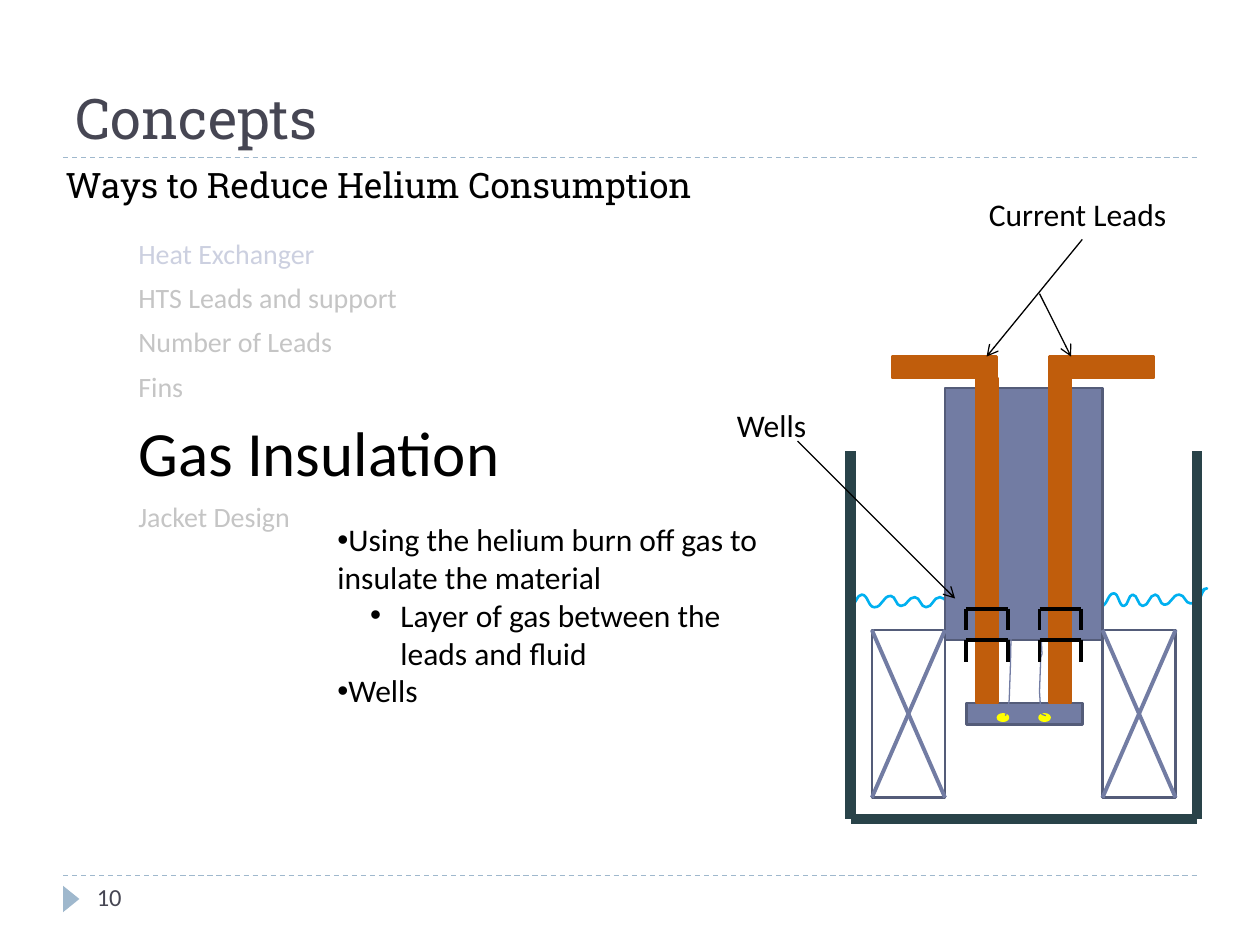
from dataclasses import dataclass
from itertools import pairwise, product
from typing import Optional

from lxml.etree import SubElement
from pptx import Presentation
from pptx.dml.color import RGBColor
from pptx.enum.dml import MSO_LINE
from pptx.enum.shapes import MSO_CONNECTOR, MSO_SHAPE
from pptx.enum.text import MSO_ANCHOR, PP_ALIGN
from pptx.oxml.ns import qn
from pptx.util import Inches, Pt

BLACK, INK, BLUE, BLUE_EDGE = "000000", "464653", "727CA3", "545C79"
COPPER, VESSEL, WATER, TRIM = "C05D0C", "294349", "00B0F0", "9FB8CD"
FADED, FADED_BLUE = "C5C5C5", "CCD0E0"


@dataclass
class TextLine:
    text: str
    size: float
    color: str = BLACK
    font: str = "Calibri"
    space_before: float = 0
    bullet: bool = False
    margin: float = 0
    indent: float = 0


@dataclass
class Box:
    left: float
    top: float
    width: float
    height: float
    fill: str
    edge: Optional[str] = None
    kind: MSO_SHAPE = MSO_SHAPE.RECTANGLE
    rotation: float = 0


def rgb(value: str) -> RGBColor:
    return RGBColor.from_string(value)


def write_lines(frame, lines: list[TextLine], wrap: bool = True) -> None:
    frame.word_wrap = wrap
    for index, line in enumerate(lines):
        paragraph = frame.paragraphs[0] if index == 0 else frame.add_paragraph()
        formats = {"alignment": PP_ALIGN.LEFT, "space_before": Pt(line.space_before)}
        for name, value in formats.items():
            setattr(paragraph, name, value)
        properties = paragraph._p.get_or_add_pPr()
        properties.set("marL", str(Inches(line.margin)))
        properties.set("indent", str(Inches(line.indent)))
        if line.bullet:
            SubElement(properties, qn("a:buFont"), typeface="Arial")
            SubElement(properties, qn("a:buChar"), char="•")
        run = paragraph.add_run()
        run.text = line.text
        for name, value in {"name": line.font, "size": Pt(line.size)}.items():
            setattr(run.font, name, value)
        run.font.color.rgb = rgb(line.color)


def add_text(slide, left: float, top: float, width: float, height: float,
             lines: list[TextLine], wrap: bool = True) -> None:
    shape = slide.shapes.add_textbox(*map(Inches, (left, top, width, height)))
    write_lines(shape.text_frame, lines, wrap)


def add_line(slide, start: tuple, end: tuple, color: str, width: float,
             dashed: bool = False, arrow: bool = False) -> None:
    connector = slide.shapes.add_connector(
        MSO_CONNECTOR.STRAIGHT, *map(Inches, (*start, *end)))
    connector.line.color.rgb = rgb(color)
    connector.line.width = Pt(width)
    if dashed:
        connector.line.dash_style = MSO_LINE.DASH
    if arrow:
        SubElement(connector.line._get_or_add_ln(), qn("a:tailEnd"), type="arrow")
    SubElement(connector._element.spPr, qn("a:effectLst"))


def add_box(slide, box: Box) -> None:
    shape = slide.shapes.add_shape(
        box.kind, *map(Inches, (box.left, box.top, box.width, box.height)))
    shape.shadow.inherit = False
    shape.rotation = box.rotation
    shape.fill.solid()
    shape.fill.fore_color.rgb = rgb(box.fill)
    if box.edge:
        shape.line.color.rgb = rgb(box.edge)
        shape.line.width = Pt(1.5)
    else:
        shape.line.fill.background()


def add_curve(slide, knots: list[tuple], color: str, width: float,
              upright: bool = False) -> None:
    """Draw a smooth curve that is level (or upright) at every knot."""
    points = [(Inches(x), Inches(y)) for x, y in knots]
    builder = slide.shapes.build_freeform(*points[0])
    builder.add_line_segments(points[1:], close=False)
    shape = builder.convert_to_shape()
    shape.shadow.inherit = False
    shape.fill.background()
    shape.line.color.rgb = rgb(color)
    shape.line.width = Pt(width)

    # Turn each straight segment into a Bezier segment
    segments = list(shape._element.iter(qn("a:lnTo")))
    for segment, ((x1, y1), (x2, y2)) in zip(segments, pairwise(points)):
        middle_x, middle_y = (x1 + x2) // 2, (y1 + y2) // 2
        controls = ([(x1, middle_y), (x2, middle_y)] if upright
                    else [(middle_x, y1), (middle_x, y2)])
        segment.tag = qn("a:cubicBezTo")
        for index, (x, y) in enumerate(controls):
            point = SubElement(segment, qn("a:pt"), x=str(x - shape.left),
                               y=str(y - shape.top))
            segment.insert(index, point)


def main() -> None:
    presentation = Presentation()
    presentation.slide_width, presentation.slide_height = Inches(10), Inches(7.5)
    slide = presentation.slides.add_slide(presentation.slide_layouts[5])

    # Page trim
    for y in (6.95, 1.25):
        add_line(slide, (0.5, y), (9.5, y), TRIM, 0.75, dashed=True)
    add_box(slide, Box(0.46, 7.07, 0.21, 0.13, TRIM,
                       kind=MSO_SHAPE.ISOSCELES_TRIANGLE, rotation=90))

    # Liquid level, behind the cylinder
    level = [(6.75, 4.81), (6.84, 4.72), (6.94, 4.82), (7.07, 4.73), (7.15, 4.81),
             (7.26, 4.74), (7.35, 4.82), (7.46, 4.74), (7.57, 4.82), (7.65, 4.72),
             (7.77, 4.83), (7.89, 4.7), (7.94, 4.82), (8.05, 4.73), (8.15, 4.82),
             (8.23, 4.71), (8.39, 4.83), (8.49, 4.72), (8.57, 4.81), (8.66, 4.74),
             (8.74, 4.81), (8.84, 4.71), (8.92, 4.81), (8.99, 4.72), (9.07, 4.81),
             (9.17, 4.72), (9.24, 4.8), (9.36, 4.72), (9.45, 4.79), (9.58, 4.67),
             (9.48, 4.8)]
    add_curve(slide, level, WATER, 1.5)
    add_box(slide, Box(7.5, 3.08, 1.25, 2, BLUE, BLUE_EDGE))

    # Concept list with the current topic large
    concepts = [("Heat Exchanger", 16, FADED_BLUE), ("HTS Leads and support", 16, FADED),
                ("Number of Leads", 16, FADED), ("Fins", 16, FADED),
                ("Gas Insulation", 36, BLACK), ("Jacket Design", 16, FADED)]
    add_text(slide, 1, 1.83, 9, 4.95,
             [TextLine(*concept, space_before=6, margin=0.3, indent=-0.3)
              for concept in concepts])

    # Title and slide number
    title = slide.shapes.title
    place = {"left": 0.5, "top": 0.17, "width": 9, "height": 1.08}
    for name, value in place.items():
        setattr(title, name, Inches(value))
    title.text_frame.vertical_anchor = MSO_ANCHOR.BOTTOM
    write_lines(title.text_frame, [TextLine("Concepts", 32, INK, "Roboto Slab")])
    add_text(slide, 0.67, 6.95, 2.17, 0.4, [TextLine("10", 14, INK)])

    # Top arms of the leads, and base with contacts
    for left in (7.08, 8.33):
        add_box(slide, Box(left, 2.83, 0.83, 0.17, COPPER, COPPER))
    add_box(slide, Box(7.67, 5.58, 0.92, 0.17, BLUE, BLUE_EDGE))
    for left in (7.92, 8.25):
        add_box(slide, Box(left, 5.67, 0.08, 0.05, "FFFF00", "FFFF00", MSO_SHAPE.OVAL))

    # Thin wires
    left_wire = [(7.98, 5.68), (7.99, 5.65), (8.01, 5.55), (8.02, 5.27), (8.03, 4.77),
                 (8.01, 4.66), (8.02, 4.23), (8.03, 4.2), (8.02, 4.06), (8.01, 3.84),
                 (8, 3.79), (7.98, 3.67)]
    right_wire = [(8.3, 5.68), (8.27, 5.67), (8.26, 5.64), (8.25, 5.49), (8.26, 5.22),
                  (8.27, 5.19), (8.26, 4.99), (8.27, 4.96), (8.27, 4.57), (8.25, 4.3),
                  (8.26, 4.14), (8.27, 4.11), (8.25, 3.99), (8.26, 3.67)]
    for wire in (left_wire, right_wire):
        add_curve(slide, wire, BLUE, 0.75, upright=True)

    # Vessel walls and floor
    for start, end in (((6.75, 3.58), (6.75, 6.5)), ((9.5, 3.58), (9.5, 6.5)),
                       ((6.83, 6.5), (9.5, 6.5)), ((7, 6.5), (6.75, 6.5))):
        add_line(slide, start, end, VESSEL, 6)

    # Crossed magnet sections
    for left in (6.92, 8.75):
        right, top, bottom = left + 0.58, 5, 6.33
        add_box(slide, Box(left, top, 0.58, 1.33, "FFFFFF", BLUE_EDGE))
        add_line(slide, (left, top), (right, bottom), BLUE, 2.25)
        add_line(slide, (left, bottom), (right, top), BLUE, 2.25)

    # Subtitle and notes on gas insulation
    add_text(slide, 0.42, 1.25, 6.75, 0.44,
             [TextLine("Ways to Reduce Helium Consumption", 20, font="Roboto Slab")])
    add_text(slide, 2.58, 4.08, 3.75, 2.83, [
        TextLine("Using the helium burn off gas to insulate the material", 18, bullet=True),
        TextLine("Layer of gas between the leads and fluid", 18, bullet=True,
                 margin=0.5, indent=-0.24),
        TextLine("Wells", 18, bullet=True)])

    # Current leads and the wells around them
    for left in (7.75, 8.33):
        add_box(slide, Box(left, 3, 0.17, 2.58, COPPER, COPPER))
    for top, left in product((4.83, 5.08), (7.67, 8.25)):
        right = left + 0.33
        add_line(slide, (left, top), (right, top), BLACK, 2.25)
        for x in (left, right):
            add_line(slide, (x, top), (x, top + 0.17), BLACK, 2.25)

    # Labels and their arrows
    add_text(slide, 7.75, 1.5, 1.68, 0.4, [TextLine("Current Leads", 18)], wrap=False)
    add_text(slide, 5.75, 3.17, 0.77, 0.4, [TextLine("Wells", 18)], wrap=False)
    for start, end in (((8.59, 1.9), (7.83, 2.83)), ((8.25, 2.33), (8.5, 2.83)),
                       ((6.33, 3.5), (7.58, 4.75))):
        add_line(slide, start, end, BLACK, 0.75, arrow=True)

    presentation.save("out.pptx")


if __name__ == "__main__":
    main()
